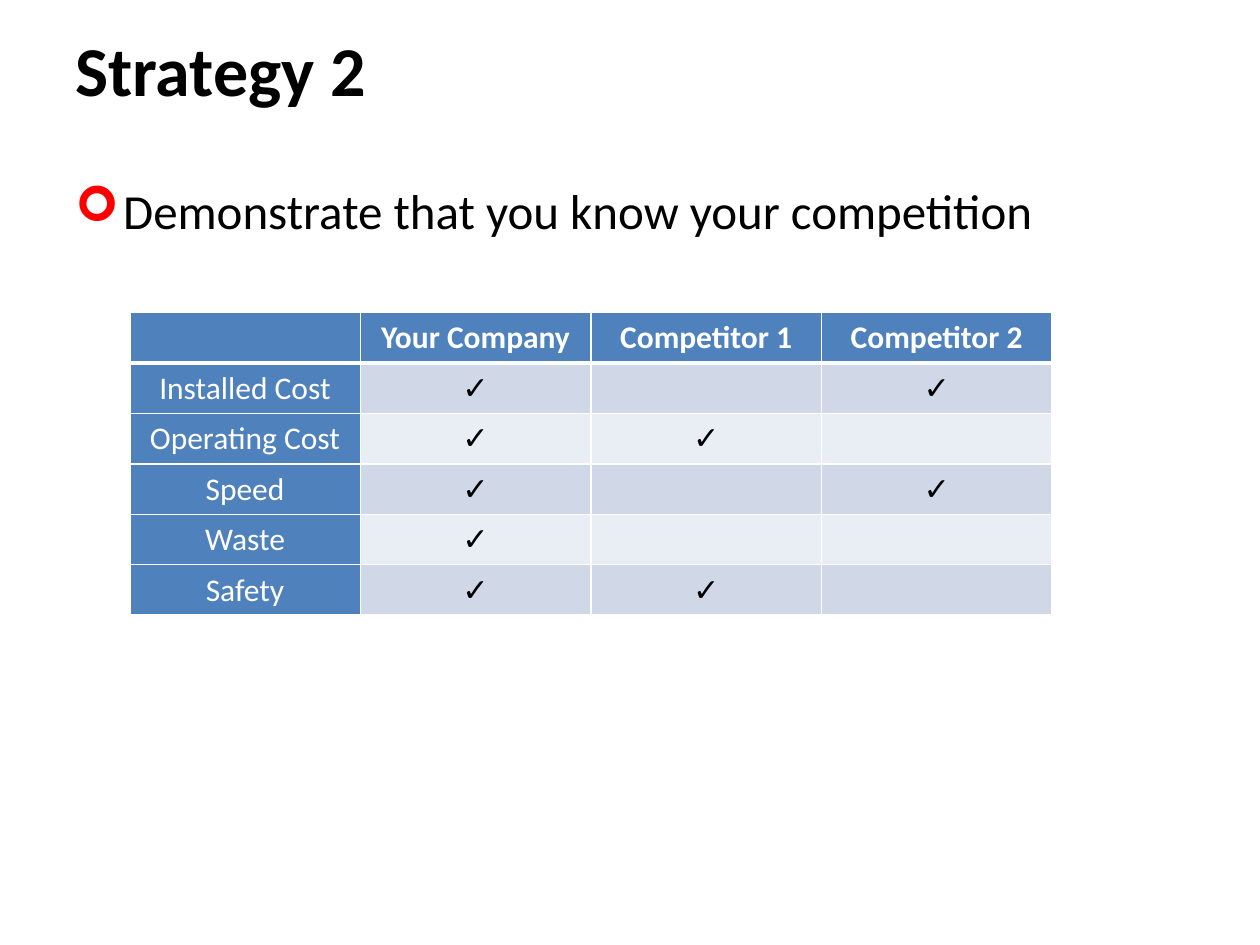
import pptx
import pptx.util
import pptx.dml.color
import pptx.enum.text
import pptx.oxml.ns
from lxml import etree

Inches, Pt = pptx.util.Inches, pptx.util.Pt
RGBColor = pptx.dml.color.RGBColor
PP_ALIGN = pptx.enum.text.PP_ALIGN
MSO_ANCHOR = pptx.enum.text.MSO_ANCHOR
qn = pptx.oxml.ns.qn

# Content
TITLE = "Strategy 2"
POINT = "Demonstrate that you know your competition"
CHECK = "✓"
COMPANIES = ["Your Company", "Competitor 1", "Competitor 2"]
CRITERIA = [  # criterion, whether each company meets it
    ("Installed Cost", (True, False, True)),
    ("Operating Cost", (True, True, False)),
    ("Speed", (True, False, True)),
    ("Waste", (True, False, False)),
    ("Safety", (True, True, False)),
]

# Style
FONT = "Calibri"
BLACK = RGBColor(0x00, 0x00, 0x00)
WHITE = RGBColor(0xFF, 0xFF, 0xFF)
RED = RGBColor(0xFF, 0x00, 0x00)
BLUE = RGBColor(0x4F, 0x81, 0xBD)
BANDS = [RGBColor(0xD0, 0xD8, 0xE8), RGBColor(0xE9, 0xED, 0xF4)]

# Layout, in inches
MARGIN = 0.5
TABLE_LEFT, TABLE_TOP = 1.03, 2.48
COL_W, ROW_H = 1.83, 0.4
INDENT = 0.38


def add_run(p, text, size, color, bold=False):
    r = p.add_run()
    r.text = text
    r.font.name, r.font.size = FONT, Pt(size)
    r.font.bold, r.font.color.rgb = bold, color


def add_box(s, top, width, height, anchor):
    tf = s.shapes.add_textbox(Inches(MARGIN), Inches(top), Inches(width), Inches(height)).text_frame
    tf.word_wrap = True
    tf.vertical_anchor = anchor
    return tf.paragraphs[0]


def add_bullet(p, char, color):
    pPr = p._p.get_or_add_pPr()
    pPr.set("marL", str(Inches(INDENT)))
    pPr.set("indent", str(-Inches(INDENT)))
    clr = etree.SubElement(pPr, qn("a:buClr"))
    etree.SubElement(clr, qn("a:srgbClr"), val=str(color))
    etree.SubElement(pPr, qn("a:buFont"), typeface="Wingdings")
    etree.SubElement(pPr, qn("a:buChar"), char=char)


def set_borders(cell, color, widths):
    tcPr = cell._tc.get_or_add_tcPr()
    for side, width in zip("LRTB", widths):
        ln = etree.SubElement(tcPr, qn("a:ln" + side), w=str(Pt(width)))
        fill = etree.SubElement(ln, qn("a:solidFill"))
        etree.SubElement(fill, qn("a:srgbClr"), val=str(color))


prs = pptx.Presentation()
prs.slide_width, prs.slide_height = Inches(10), Inches(7.5)
s = prs.slides.add_slide(prs.slide_layouts[6])

# Title and bullet point
add_run(add_box(s, 0.06, 6.96, 0.97, MSO_ANCHOR.MIDDLE), TITLE, 40, BLACK, bold=True)
p = add_box(s, 1.38, 10 - 2 * MARGIN, 5.32, MSO_ANCHOR.TOP)
add_bullet(p, "➢", RED)
add_run(p, POINT, 28, BLACK)

# Comparison table
rows = [[""] + COMPANIES]
rows += [[name] + [CHECK if met else "" for met in marks] for name, marks in CRITERIA]
n_rows, n_cols = len(rows), len(rows[0])
table = s.shapes.add_table(n_rows, n_cols, Inches(TABLE_LEFT), Inches(TABLE_TOP),
                           Inches(COL_W * n_cols), Inches(ROW_H * n_rows)).table
for i, row in enumerate(rows):
    for j, text in enumerate(row):
        cell = table.cell(i, j)
        header = i == 0 or j == 0
        set_borders(cell, WHITE, (1, 1, 3 if i == 1 else 1, 3 if i == 0 else 1))
        cell.fill.solid()
        cell.fill.fore_color.rgb = BLUE if header else BANDS[(i - 1) % 2]
        p = cell.text_frame.paragraphs[0]
        p.alignment = PP_ALIGN.CENTER
        if text:
            add_run(p, text, 18, WHITE if header else BLACK, bold=i == 0)

prs.save("out.pptx")
